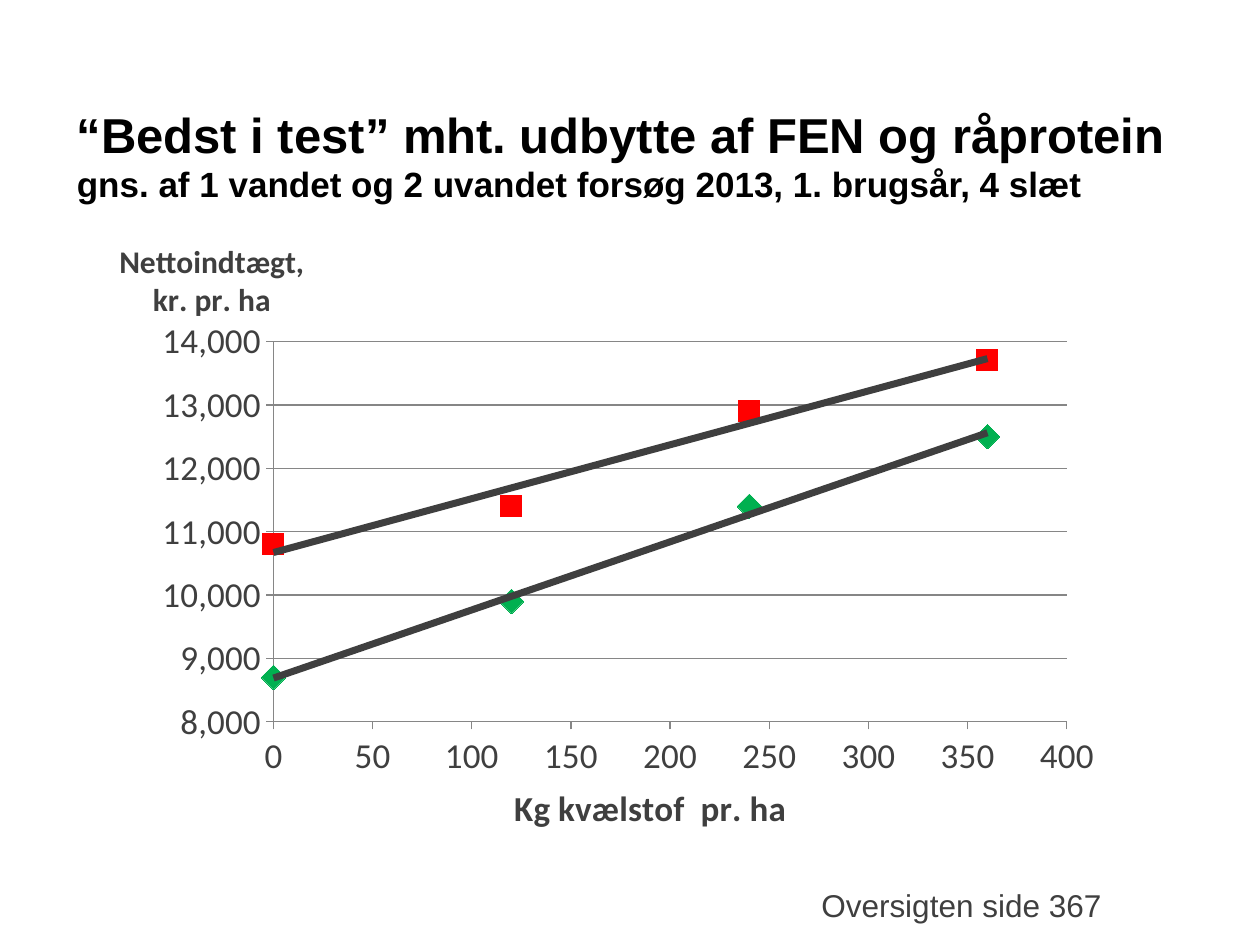
from lxml import etree
from pptx import Presentation, util as u
from pptx.chart.data import XyChartData
from pptx.dml.color import RGBColor
from pptx.enum import chart as ch, text
from pptx.oxml import parse_xml
from pptx.oxml.ns import nsdecls, qn

W, H = u.Inches(10), u.Inches(7.5)
COLORS = {"title": "000000", "text": "3F3F3F", "grid": "868686",
          "green": "00B050", "red": "FF0000"}
NITROGEN = [0, 120, 240, 360]
# net income per nitrogen level, colour, marker, marker size
MIXTURES = [
    ([8700, 9900, 11400, 12500], "green", ch.XL_MARKER_STYLE.DIAMOND, 14),
    ([10800, 11400, 12900, 13700], "red", ch.XL_MARKER_STYLE.SQUARE, 12),
]


def rgb(name):
    return RGBColor.from_string(COLORS[name])


def share(x, y, w, h):
    """Turn shares of the slide's size into a box."""
    return int(x * W), int(y * H), int(w * W), int(h * H)


def add_run(p, words, size, color, font, bold=False):
    r = p.add_run()
    r.text = words
    r.font.size, r.font.name, r.font.bold = u.Pt(size), font, bold
    r.font.color.rgb = rgb(color)


def set_layout(el, index, **values):
    """Give a chart part a manual layout, in shares of the chart's box."""
    for old in el.findall(qn("c:layout")):
        el.remove(old)
    layout = etree.Element(qn("c:layout"))
    manual = etree.SubElement(layout, qn("c:manualLayout"))
    for tag, val in values.items():
        etree.SubElement(manual, qn("c:" + tag)).set("val", str(val))
    el.insert(index, layout)


def add_title(s, box):
    sp = s.shapes.title
    sp.left, sp.top, sp.width, sp.height = box
    tf = sp.text_frame
    tf.word_wrap = True
    tf.auto_size = text.MSO_AUTO_SIZE.NONE
    tf.vertical_anchor = text.MSO_ANCHOR.MIDDLE
    p = tf.paragraphs[0]
    p.alignment = text.PP_ALIGN.LEFT
    add_run(p, "“Bedst i test” mht. udbytte af FEN og råprotein", 28, "title", "Arial", True)
    p.add_line_break()
    add_run(p, "gns. af 1 vandet og 2 uvandet forsøg 2013, 1. brugsår, 4 slæt",
            20, "title", "Arial", True)


def format_axis(axis, low, high, step, lines, size, x, y):
    axis.minimum_scale, axis.maximum_scale, axis.major_unit = low, high, step
    axis.major_tick_mark = ch.XL_TICK_MARK.OUTSIDE
    axis.minor_tick_mark = ch.XL_TICK_MARK.NONE
    axis.tick_labels.font.size = u.Pt(20)
    axis.format.line.color.rgb = rgb("grid")
    axis.format.line.width = u.Pt(0.75)
    title = axis.axis_title
    tf = title.text_frame
    for i, line in enumerate(lines):
        p = tf.add_paragraph() if i else tf.paragraphs[0]
        p.alignment = text.PP_ALIGN.CENTER
        add_run(p, line, size, "text", "Calibri", True)
    body = title._element.find(".//" + qn("a:bodyPr"))
    body.set("rot", "0")
    body.set("vert", "horz")
    set_layout(title._element, 1, xMode="edge", yMode="edge", x=x, y=y)


def add_trendline(series):
    trend = parse_xml(
        f'<c:trendline {nsdecls("c", "a")}><c:spPr><a:ln w="{u.Pt(4)}"><a:solidFill>'
        f'<a:srgbClr val="{COLORS["text"]}"/></a:solidFill></a:ln></c:spPr>'
        '<c:trendlineType val="linear"/><c:dispRSqr val="0"/><c:dispEq val="0"/>'
        '</c:trendline>')
    series._element.find(qn("c:xVal")).addprevious(trend)


def add_income_chart(s, box):
    data = XyChartData()
    for incomes, *_ in MIXTURES:
        series = data.add_series("")
        for point in zip(NITROGEN, incomes):
            series.add_data_point(*point)
    chart = s.shapes.add_chart(ch.XL_CHART_TYPE.XY_SCATTER, *box, data).chart
    chart.has_title = chart.has_legend = False
    chart.font.name, chart.font.size = "Calibri", u.Pt(10)
    chart.font.color.rgb = rgb("text")
    plot = chart.plots[0]
    plot.vary_by_categories = False

    # Axes and plot area
    format_axis(chart.category_axis, 0, 400, 50, ["Kg kvælstof  pr. ha"], 20, 0.37, 0.86)
    format_axis(chart.value_axis, 8000, 14000, 1000,
                ["Nettoindtægt,", "kr. pr. ha"], 18, 0.01, 0.02)
    chart.category_axis.has_major_gridlines = False
    labels = chart.value_axis.tick_labels
    labels.number_format, labels.number_format_is_linked = "#,##0", False
    grid = chart.value_axis.major_gridlines.format.line
    grid.color.rgb, grid.width = rgb("grid"), u.Pt(0.75)
    set_layout(chart._chartSpace.find(".//" + qn("c:plotArea")), 0,
               layoutTarget="inner", xMode="edge", yMode="edge",
               x=0.155, y=0.183, w=0.728, h=0.592)

    # Markers and trend lines
    for series, (_, color, style, size) in zip(plot.series, MIXTURES):
        series.format.line.fill.background()
        marker = series.marker
        marker.style, marker.size = style, size
        marker.format.fill.solid()
        marker.format.fill.fore_color.rgb = rgb(color)
        marker.format.line.color.rgb = rgb(color)
        add_trendline(series)


def add_reference(s, box):
    tf = s.shapes.add_textbox(*box).text_frame
    tf.word_wrap = True
    add_run(tf.paragraphs[0], "Oversigten side 367", 18, "text", "Arial")


def main():
    prs = Presentation()
    prs.slide_width, prs.slide_height = W, H
    s = prs.slides.add_slide(prs.slide_layouts[5])
    add_title(s, share(0.051, 0.101, 0.949, 0.125))
    add_income_chart(s, share(0.083, 0.237, 0.865, 0.68))
    add_reference(s, share(0.642, 0.931, 0.268, 0.053))
    prs.save("out.pptx")


if __name__ == "__main__":
    main()
